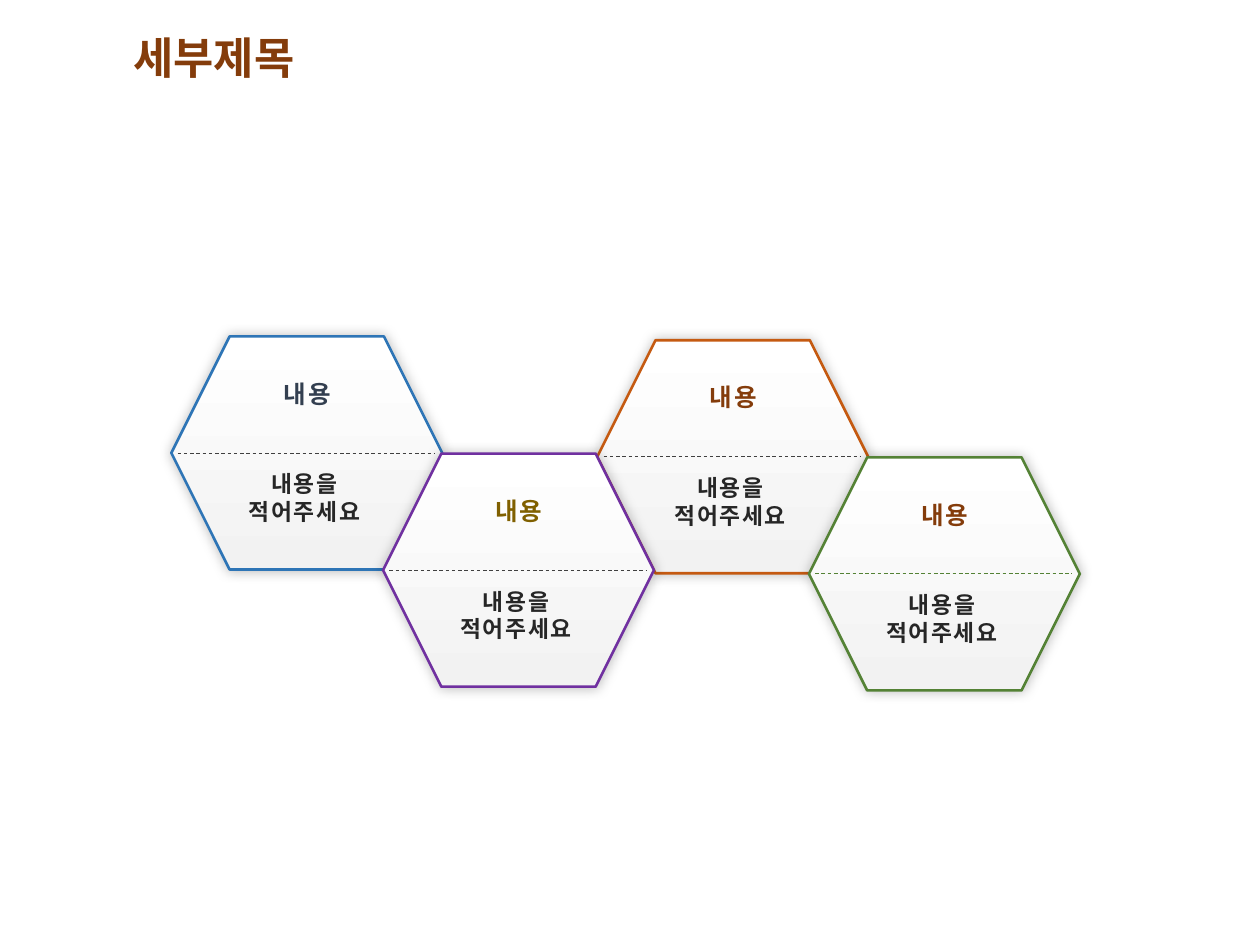
from dataclasses import dataclass

import pptx
import pptx.dml.color
import pptx.enum.dml
import pptx.enum.shapes
import pptx.enum.text
import pptx.oxml
import pptx.oxml.ns
import pptx.util
from pptx.util import Inches


@dataclass(frozen=True)
class Theme:
    """Colours, fonts and type sizes of the slide."""
    title_font: str = "Calibri"
    font: str = "Noto Sans CJK KR"
    title: str = "843C0B"
    body: str = "262626"
    grad_top: str = "FFFFFF"
    grad_bottom: str = "F2F2F2"
    title_size: float = 25
    heading_size: float = 14
    body_size: float = 13
    heading_spacing: float = 18
    body_spacing: float = 15.8


@dataclass(frozen=True)
class Hexagon:
    """One hexagon: position, colours and words."""
    left: float
    top: float
    outline: str
    divider: str
    heading_color: str
    heading: str = "내용"
    body: tuple[str, ...] = ("내용을", "적어주세요")


THEME = Theme()
WIDTH, HEIGHT = 2.15, 1.85
HEXAGONS = (
    Hexagon(4.74, 2.7, "C55A11", "404040", "843C0B"),
    Hexagon(1.36, 2.67, "2E75B6", "404040", "333F50"),
    Hexagon(3.04, 3.6, "7030A0", "404040", "806000"),
    Hexagon(6.42, 3.63, "548235", "548235", "843C0B"),
)
SHADOW = (
    f'<a:effectLst {pptx.oxml.ns.nsdecls("a")}><a:outerShdw blurRad="88900" dist="0" '
    'algn="ctr" rotWithShape="0"><a:srgbClr val="000000"><a:alpha val="25000"/>'
    '</a:srgbClr></a:outerShdw></a:effectLst>'
)
NO_EFFECT = f'<a:effectLst {pptx.oxml.ns.nsdecls("a")}/>'


def rgb(value: str) -> pptx.dml.color.RGBColor:
    """Return the colour for a hex string."""
    return pptx.dml.color.RGBColor.from_string(value)


def add_title(s: pptx.slide.Slide, text: str) -> None:
    """Place and format the title placeholder."""
    sp = s.shapes.title
    sp.left, sp.top, sp.width, sp.height = map(Inches, (0.96, 0.19, 8.62, 0.57))
    tf = sp.text_frame
    tf.text = text
    tf.auto_size = pptx.enum.text.MSO_AUTO_SIZE.NONE
    tf.vertical_anchor = pptx.enum.text.MSO_ANCHOR.MIDDLE
    p = tf.paragraphs[0]
    p.alignment = pptx.enum.text.PP_ALIGN.LEFT
    p.line_spacing = 0.9
    p.font.name = THEME.title_font
    p.font.size = pptx.util.Pt(THEME.title_size)
    p.font.bold = True
    p.font.color.rgb = rgb(THEME.title)


def add_label(s: pptx.slide.Slide, box: tuple[float, float, float, float],
              lines: tuple[str, ...], size: float, spacing: float, color: str) -> None:
    """Add a centred bold text box, one paragraph per line."""
    tf = s.shapes.add_textbox(*map(Inches, box)).text_frame
    tf.word_wrap = True
    tf.text = "\n".join(lines)
    for p in tf.paragraphs:
        p.alignment = pptx.enum.text.PP_ALIGN.CENTER
        p.line_spacing = pptx.util.Pt(spacing)
        p.font.name = THEME.font
        p.font.size = pptx.util.Pt(size)
        p.font.bold = True
        p.font.color.rgb = rgb(color)
        for r in p.runs:
            rpr = r._r.get_or_add_rPr()
            rpr.set("spc", "100")
            ea = pptx.oxml.parse_xml(f'<a:ea {pptx.oxml.ns.nsdecls("a")} typeface="{THEME.font}"/>')
            rpr.append(ea)


def add_hexagon(s: pptx.slide.Slide, h: Hexagon) -> None:
    """Draw a hexagon with its divider, heading and body."""
    sp = s.shapes.add_shape(pptx.enum.shapes.MSO_SHAPE.HEXAGON,
                            *map(Inches, (h.left, h.top, WIDTH, HEIGHT)))
    sp.fill.gradient()
    sp.fill.gradient_angle = 270
    for stop, color in zip(sp.fill.gradient_stops, (THEME.grad_top, THEME.grad_bottom)):
        stop.color.rgb = rgb(color)
    sp.line.color.rgb = rgb(h.outline)
    sp.line.width = pptx.util.Pt(1.5)
    sp._element.spPr.append(pptx.oxml.parse_xml(SHADOW))

    y = Inches(h.top + HEIGHT / 2)
    line = s.shapes.add_connector(pptx.enum.shapes.MSO_CONNECTOR.STRAIGHT,
                                  Inches(h.left + 0.05), y, Inches(h.left + 2.09), y)
    line.line.color.rgb = rgb(h.divider)
    line.line.width = pptx.util.Pt(0.5)
    line.line.dash_style = pptx.enum.dml.MSO_LINE.DASH
    line._element.spPr.append(pptx.oxml.parse_xml(NO_EFFECT))

    add_label(s, (h.left + 0.22, h.top + 0.27, 1.72, 0.34), (h.heading,),
              THEME.heading_size, THEME.heading_spacing, h.heading_color)
    add_label(s, (h.left + 0.28, h.top + 1.01, 1.55, 0.54), h.body,
              THEME.body_size, THEME.body_spacing, THEME.body)


def main() -> None:
    """Build and save the slide."""
    prs = pptx.Presentation()
    prs.slide_width, prs.slide_height = Inches(10), Inches(7.5)
    s = prs.slides.add_slide(prs.slide_layouts[5])
    add_title(s, "세부제목")
    for h in HEXAGONS:
        add_hexagon(s, h)
    prs.save("out.pptx")


if __name__ == "__main__":
    main()
